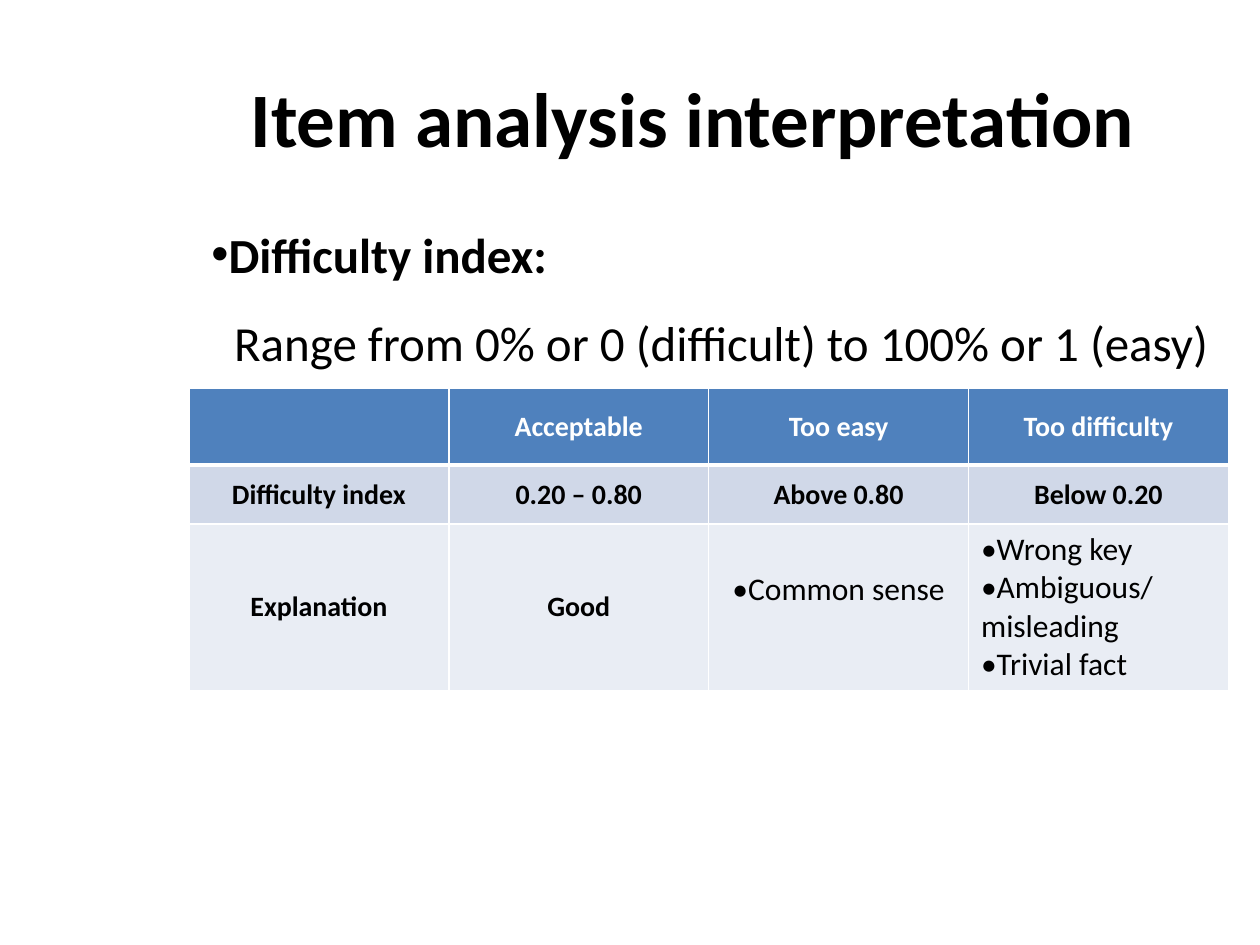
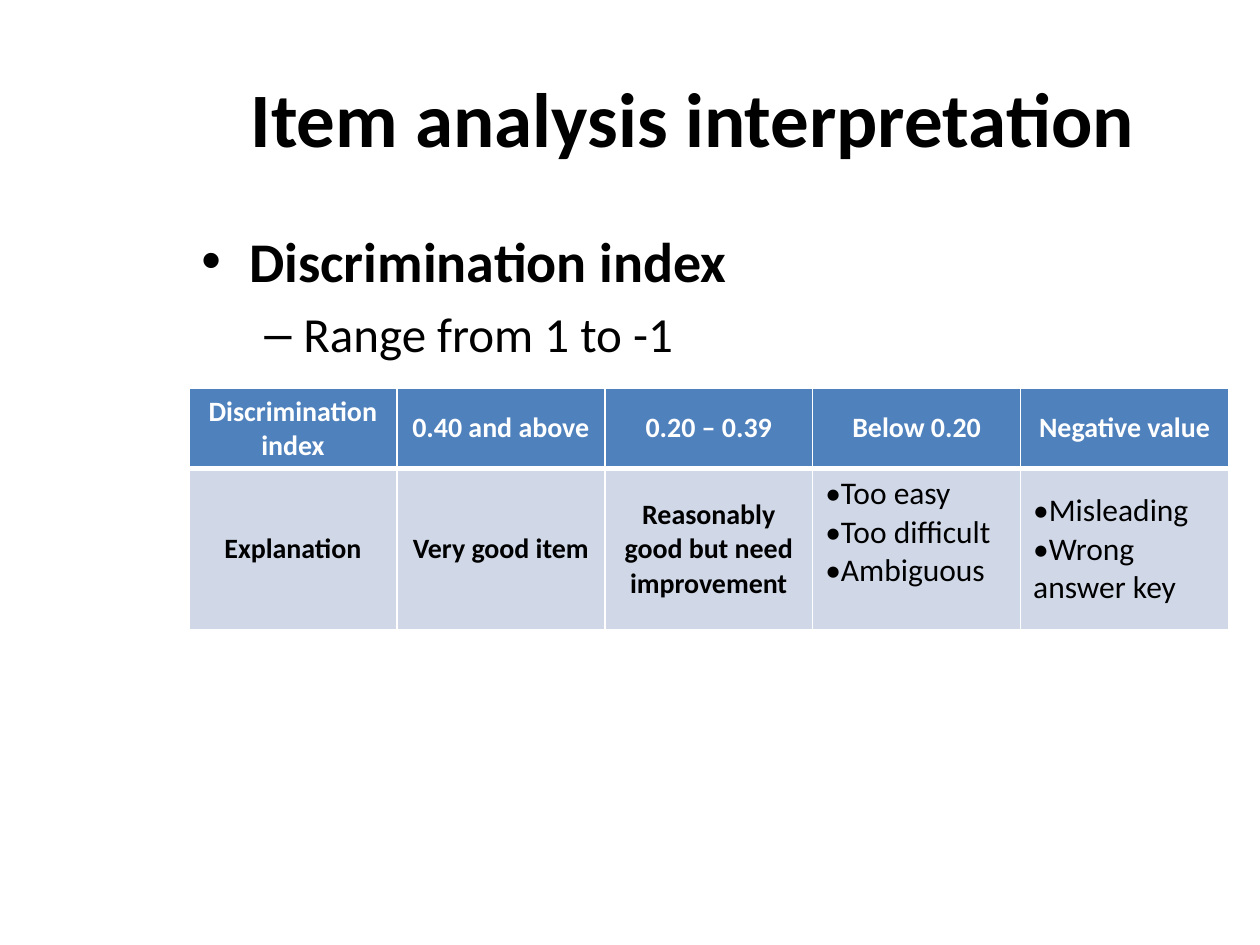
from lxml import etree
from pptx import Presentation
from pptx import util as u
from pptx.dml.color import RGBColor
from pptx.enum import text
from pptx.oxml import ns

BLACK = RGBColor(0x00, 0x00, 0x00)
WHITE = RGBColor(0xFF, 0xFF, 0xFF)
HEADER_BLUE = RGBColor(0x4F, 0x81, 0xBD)
BANDS = (RGBColor(0xD0, 0xD8, 0xE8), RGBColor(0xE9, 0xED, 0xF4))

FONT = "Calibri"
TITLE = "Item analysis interpretation"
TABLE_LEFT, TABLE_TOP, TABLE_WIDTH = 1.5, 3.08, 8.25
CENTER = text.PP_ALIGN.CENTER


class Reasons(tuple):
    """Bulleted cell entries, as opposed to a plain bold label."""


class Lesson:
    def __init__(self):
        self.deck = Presentation()
        self.deck.slide_width = u.Inches(10)
        self.deck.slide_height = u.Inches(7.5)
        self.slide = None

    def new_slide(self):
        self.slide = self.deck.slides.add_slide(self.deck.slide_layouts[6])
        title = self.text_box(1.5, 0.3, 8, 1.25)
        title.vertical_anchor = text.MSO_ANCHOR.MIDDLE
        self.add_words(title.paragraphs[0], TITLE, 44, bold=True, align=CENTER)

    def text_box(self, left, top, width, height):
        box = self.slide.shapes.add_textbox(*map(u.Inches, (left, top, width, height)))
        box.text_frame.word_wrap = True
        return box.text_frame

    def add_words(self, para, words, size, bold=False, color=BLACK, align=text.PP_ALIGN.LEFT,
                  bullet=None, bullet_font="Arial", margin=0.0, hanging=0.0):
        props = para._p.get_or_add_pPr()
        props.set("marL", str(u.Inches(margin)))
        props.set("indent", str(-u.Inches(hanging)))
        if bullet:
            etree.SubElement(props, ns.qn("a:buFont"), typeface=bullet_font)
            etree.SubElement(props, ns.qn("a:buChar"), char=bullet)
        para.alignment = align
        span = para.add_run()
        span.text = words
        span.font.name = FONT
        span.font.size = u.Pt(size)
        span.font.bold = bold
        span.font.color.rgb = color

    def border(self, cell, bottom_width):
        props = cell._tc.get_or_add_tcPr()
        for side, width in (("L", 1), ("R", 1), ("T", 1), ("B", bottom_width)):
            line = etree.SubElement(props, ns.qn(f"a:ln{side}"), w=str(u.Pt(width)))
            fill = etree.SubElement(line, ns.qn("a:solidFill"))
            etree.SubElement(fill, ns.qn("a:srgbClr"), val=str(WHITE))

    def table(self, rows, heights, raised_column, reasons_align=None):
        """Draw rows under a header; reasons in raised_column sit above the middle."""
        reasons_align = reasons_align or {}
        columns = len(rows[0])
        frame = self.slide.shapes.add_table(
            len(rows), columns, u.Inches(TABLE_LEFT), u.Inches(TABLE_TOP),
            u.Inches(TABLE_WIDTH), u.Inches(sum(heights)))
        grid = frame.table
        for column in grid.columns:
            column.width = u.Inches(TABLE_WIDTH / columns)
        for r, (entries, height) in enumerate(zip(rows, heights)):
            grid.rows[r].height = u.Inches(height)
            for c, entry in enumerate(entries):
                cell = grid.cell(r, c)
                self.border(cell, 1 if r else 3)
                cell.fill.solid()
                cell.fill.fore_color.rgb = BANDS[(r - 1) % 2] if r else HEADER_BLUE
                cell.vertical_anchor = text.MSO_ANCHOR.MIDDLE
                if isinstance(entry, Reasons):
                    if c == raised_column:
                        cell.margin_bottom = u.Inches(0.33)
                    self.reasons(cell.text_frame, entry, reasons_align.get(c))
                elif entry:
                    self.add_words(cell.text_frame.paragraphs[0], entry, 16, bold=True,
                                   color=BLACK if r else WHITE, align=CENTER)

    def reasons(self, frame, entries, align):
        for i, words in enumerate(entries):
            para = frame.add_paragraph() if i else frame.paragraphs[0]
            self.add_words(para, words, 18, bullet="•", bullet_font=FONT,
                           align=align or text.PP_ALIGN.LEFT)


def difficulty_slide(lesson):
    lesson.new_slide()
    lesson.table(
        [("", "Acceptable", "Too easy", "Too difficulty"),
         ("Difficulty index", "0.20 – 0.80", "Above 0.80", "Below 0.20"),
         ("Explanation", "Good", Reasons(["Common sense"]),
          Reasons(["Wrong key", "Ambiguous/misleading", "Trivial fact"]))],
        heights=(0.61, 0.47, 1.32), raised_column=2, reasons_align={2: CENTER})
    body = lesson.text_box(1.58, 1.5, 8.42, 1.51)
    heading, detail = body.paragraphs[0], body.add_paragraph()
    lesson.add_words(heading, "Difficulty index:", 28, bold=True, bullet="•")
    lesson.add_words(detail, "Range from 0% or 0 (difficult) to 100% or 1 (easy)", 28,
                     margin=0.18)
    for para in (heading, detail):
        para.line_spacing = 1.5


def discrimination_slide(lesson):
    lesson.new_slide()
    body = lesson.text_box(1.5, 1.75, 8, 4.95)
    lesson.add_words(body.paragraphs[0], "Discrimination index", 32, bold=True,
                     bullet="•", margin=0.38, hanging=0.38)
    detail = body.add_paragraph()
    detail.level = 1
    lesson.add_words(detail, "Range from 1 to -1", 28, bullet="–", margin=0.81, hanging=0.31)
    detail.space_before = u.Pt(5.6)
    lesson.table(
        [("Discrimination index", "0.40 and above", "0.20 – 0.39", "Below 0.20",
          "Negative value"),
         ("Explanation", "Very good item", "Reasonably good but need improvement",
          Reasons(["Too easy", "Too difficult", "Ambiguous"]),
          Reasons(["Misleading", "Wrong answer key"]))],
        heights=(0.64, 1.28), raised_column=3)


def main():
    lesson = Lesson()
    difficulty_slide(lesson)
    discrimination_slide(lesson)
    lesson.deck.save("out.pptx")


if __name__ == "__main__":
    main()
